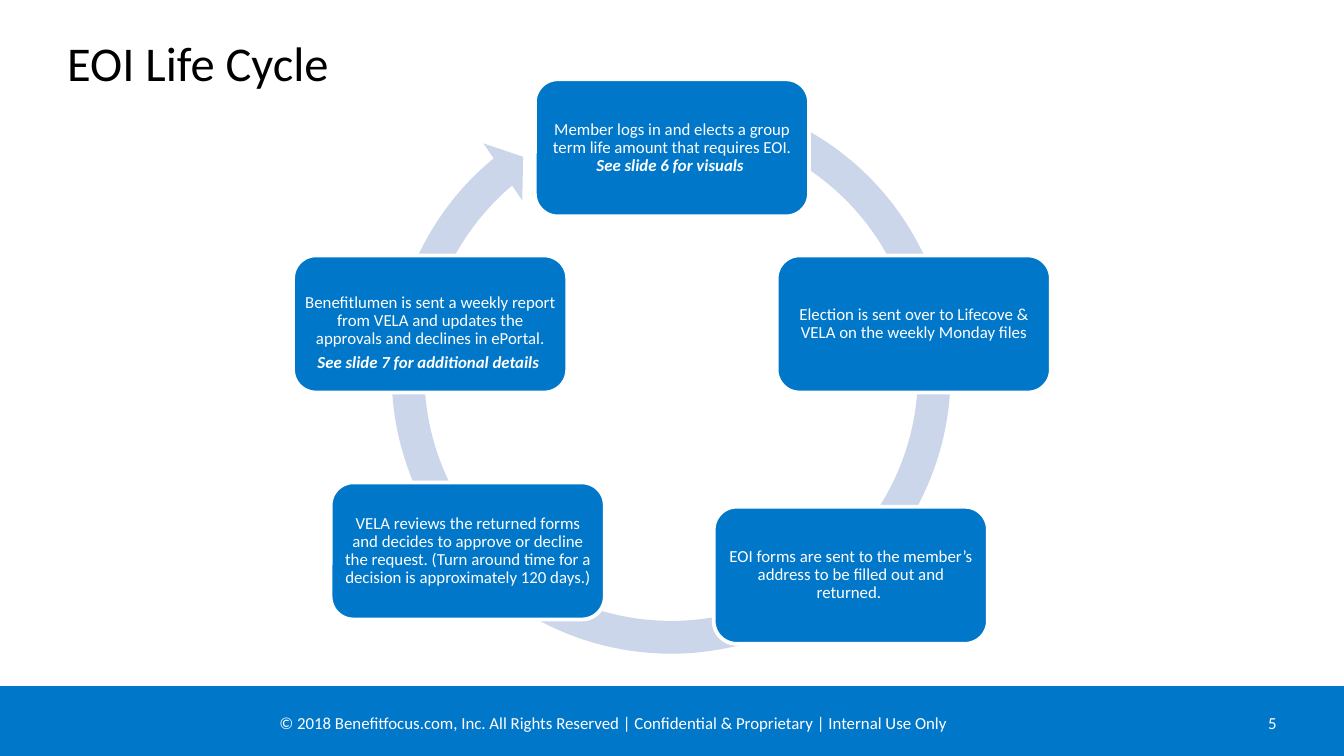
from dataclasses import dataclass

from pptx import Presentation
from pptx.dml.color import RGBColor as Rgb
from pptx.enum.shapes import MSO_SHAPE as Preset
from pptx.enum.text import MSO_ANCHOR as Anchor, MSO_AUTO_SIZE as AutoSize, PP_ALIGN as Align
from pptx.util import Cm, Pt


@dataclass(frozen=True)
class Theme:
    font: str = "Calibri"
    blue: str = "0077C8"
    ring: str = "CCD6EB"
    white: str = "FFFFFF"
    black: str = "000000"
    title_size: float = 26
    body_size: float = 9


@dataclass(frozen=True)
class Span:
    text: str
    strong: bool = False  # bold italic


@dataclass(frozen=True)
class Step:
    left: float
    top: float
    paras: tuple[tuple[Span, ...], ...]
    inset_top: float = 0.1


THEME = Theme()
PAGE_WIDTH, PAGE_HEIGHT = 25.4, 14.29
STEP_WIDTH, STEP_HEIGHT = 5.18, 2.59
INSET = 0.1
FOOTER_TOP, FOOTER_HEIGHT = 13.34, 0.64

STEPS = (
    Step(10.11, 1.5, ((
        Span("Member logs in and elects a group term life amount that requires EOI. "),
        Span("See slide 6 for visuals ", strong=True)),)),
    Step(14.68, 4.83, ((
        Span("Election is sent over to Lifecove & VELA on the weekly Monday files"),),)),
    Step(13.49, 9.58, ((
        Span("EOI forms are sent to the member’s address to be filled out and returned. "),),)),
    Step(6.25, 9.12, ((
        Span("VELA reviews the returned forms and decides to approve or decline the request. "
             "(Turn around time for a decision is approximately 120 days.)"),),)),
    Step(5.54, 4.83, (
        (Span("Benefitlumen is sent a weekly report from VELA and updates the "
              "approvals and declines in ePortal."),),
        (Span("See slide 7 for additional details ", strong=True),)), inset_top=0.45),
)


def write_text(frame, paras, *, size=THEME.body_size, color=THEME.white, align=Align.LEFT,
               anchor=Anchor.TOP, insets=(0, 0.13, 0.25, 0.13), line=None, after=None) -> None:
    """Fill a text frame; insets run left, top, right, bottom in cm."""
    frame.word_wrap = True
    frame.auto_size = AutoSize.NONE
    frame.vertical_anchor = anchor
    (frame.margin_left, frame.margin_top,
     frame.margin_right, frame.margin_bottom) = map(Cm, insets)
    for index, spans in enumerate(paras):
        para = frame.add_paragraph() if index else frame.paragraphs[0]
        para.alignment = align
        para.space_before = Pt(0)
        if line is not None:
            para.line_spacing = line
        if after is not None:
            para.space_after = after
        for span in spans:
            run = para.add_run()
            run.text = span.text
            font = run.font
            font.name, font.size = THEME.font, Pt(size)
            font.bold = font.italic = span.strong
            font.color.rgb = Rgb.from_string(color)


def add_box(page, preset, left: float, top: float, width: float, height: float,
            fill: str, outline: str | None = None):
    box = page.shapes.add_shape(preset, Cm(left), Cm(top), Cm(width), Cm(height))
    box.shadow.inherit = False
    box.fill.solid()
    box.fill.fore_color.rgb = Rgb.from_string(fill)
    if outline:
        box.line.color.rgb = Rgb.from_string(outline)
        box.line.width = Pt(2)
    else:
        box.line.fill.background()
    return box


def add_label(page, text: str, left: float, width: float, **text_format) -> None:
    label = page.shapes.add_textbox(Cm(left), Cm(FOOTER_TOP), Cm(width), Cm(FOOTER_HEIGHT))
    write_text(label.text_frame, ((Span(text),),), **text_format)


def add_ring(page) -> None:
    ring = add_box(page, Preset.CIRCULAR_ARROW, 7.06, 1.45, 11.25, 11.25, THEME.ring)
    head_angle, end_angle, start_angle = 5.51, 230.25, 289.37
    # An angle is held in 1/60000 degree and an adjustment in 1/100000
    angles = [angle * 0.6 for angle in (head_angle, end_angle, start_angle)]
    for index, value in enumerate((0.055, *angles, 0.058)):
        ring.adjustments[index] = value


def add_step(page, step: Step) -> None:
    box = add_box(page, Preset.ROUNDED_RECTANGLE, step.left, step.top,
                  STEP_WIDTH, STEP_HEIGHT, THEME.blue, THEME.white)
    write_text(box.text_frame, step.paras, align=Align.CENTER, anchor=Anchor.MIDDLE,
               insets=(INSET, step.inset_top, INSET, INSET), line=0.9, after=Pt(3.15))


def main() -> None:
    deck = Presentation()
    deck.slide_width, deck.slide_height = Cm(PAGE_WIDTH), Cm(PAGE_HEIGHT)
    page = deck.slides.add_slide(deck.slide_layouts[5])

    # Title
    title = page.shapes.title
    title.left, title.top, title.width, title.height = map(Cm, (1.27, 0.61, 22.86, 1.27))
    write_text(title.text_frame, ((Span("EOI Life Cycle"),),),
               size=THEME.title_size, color=THEME.black, line=Pt(28))

    # Footer band
    add_box(page, Preset.RECTANGLE, 0, 12.97, PAGE_WIDTH, PAGE_HEIGHT - 12.97, THEME.blue)
    add_label(page, "© 2018 Benefitfocus.com, Inc. All Rights Reserved | "
              "Confidential & Proprietary | Internal Use Only", 5.28, 17.12)
    add_label(page, "5", 21.29, 2.84, align=Align.RIGHT, insets=(0.25, 0.13, 0, 0.13))

    # Cycle
    add_ring(page)
    for step in STEPS:
        add_step(page, step)

    deck.save("out.pptx")


if __name__ == "__main__":
    main()
